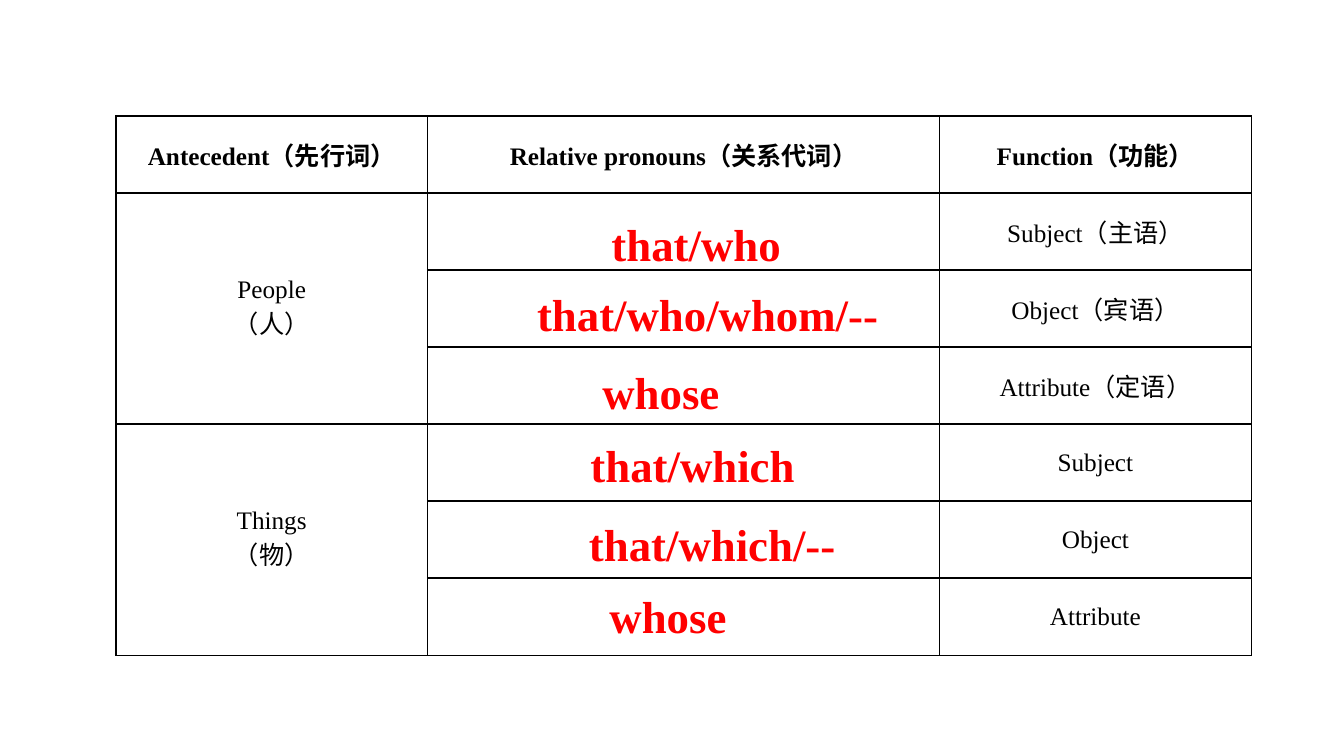
from lxml.etree import SubElement
from pptx import Presentation
from pptx.dml.color import RGBColor
from pptx.enum.text import MSO_AUTO_SIZE as AutoSize, MSO_VERTICAL_ANCHOR as Anchor, PP_ALIGN as Align
from pptx.oxml.ns import qn
from pptx.util import Emu, Pt

EMU_PER_PX = 9144
BLACK = RGBColor(0x00, 0x00, 0x00)
RED = RGBColor(0xFF, 0x00, 0x00)
FONT = "Times New Roman"
HEADER = {"name": FONT, "size": Pt(18), "bold": True}
BODY = {"name": FONT, "size": Pt(18), "bold": False}
ANSWER = {"name": FONT, "size": Pt(32), "bold": True}

TABLE_BOX = (115, 115, 1126, 535)
COLUMN_WIDTHS = (309, 508, 309)
HEADINGS = ("Antecedent（先行词）", "Relative pronouns（关系代词）", "Function（功能）")
ANTECEDENTS = (
    ("People\n（人）", ("Subject（主语）", "Object（宾语）", "Attribute（定语）")),
    ("Things\n（物）", ("Subject", "Object", "Attribute")),
)
ANSWER_HEIGHT = 64
ANSWERS = (
    ("that/who", 549, 210, 283),
    ("that/who/whom/--", 509, 280, 386),
    ("whose", 565, 357, 181),
    ("that/which", 566, 429, 242),
    ("that/which/--", 550, 508, 313),
    ("whose", 572, 579, 181),
)


def px(length):
    return Emu(length * EMU_PER_PX)


def write_text(frame, text, style, color):
    frame.text = text
    for para in frame.paragraphs:
        para.alignment = Align.CENTER
        for span in para.runs:
            for name, value in style.items():
                setattr(span.font, name, value)
            span.font.color.rgb = color


def frame_cell(cell):
    properties = cell._tc.get_or_add_tcPr()
    for side in ("lnL", "lnR", "lnT", "lnB"):
        line = SubElement(properties, qn(f"a:{side}"), w=str(Pt(1)))
        fill = SubElement(line, qn("a:solidFill"))
        SubElement(fill, qn("a:srgbClr"), val=str(BLACK))
    cell.fill.background()
    cell.vertical_anchor = Anchor.MIDDLE


def add_pronoun_table(page):
    row_count = 1 + sum(len(functions) for _, functions in ANTECEDENTS)
    bounds = [px(length) for length in TABLE_BOX]
    table = page.shapes.add_table(row_count, len(HEADINGS), *bounds).table
    table.first_row = table.horz_banding = False
    for column, width in zip(table.columns, COLUMN_WIDTHS):
        column.width = px(width)
    for row in table.rows:
        row.height = bounds[3] // row_count
    for cell in table.iter_cells():
        frame_cell(cell)
    for column, heading in enumerate(HEADINGS):
        write_text(table.cell(0, column).text_frame, heading, HEADER, BLACK)
    first = 1
    for antecedent, functions in ANTECEDENTS:
        group = table.cell(first, 0)
        group.merge(table.cell(first + len(functions) - 1, 0))
        write_text(group.text_frame, antecedent, BODY, BLACK)
        for row, function in enumerate(functions, first):
            write_text(table.cell(row, 2).text_frame, function, BODY, BLACK)
        first += len(functions)


def add_answer(page, text, left, top, width):
    box = page.shapes.add_textbox(px(left), px(top), px(width), px(ANSWER_HEIGHT))
    box.text_frame.word_wrap = True
    box.text_frame.auto_size = AutoSize.SHAPE_TO_FIT_TEXT
    write_text(box.text_frame, text, ANSWER, RED)


def main():
    deck = Presentation()
    deck.slide_width, deck.slide_height = px(1333), px(750)
    page = deck.slides.add_slide(deck.slide_layouts[6])
    add_pronoun_table(page)
    for answer in ANSWERS:
        add_answer(page, *answer)
    deck.save("out.pptx")


if __name__ == "__main__":
    main()
